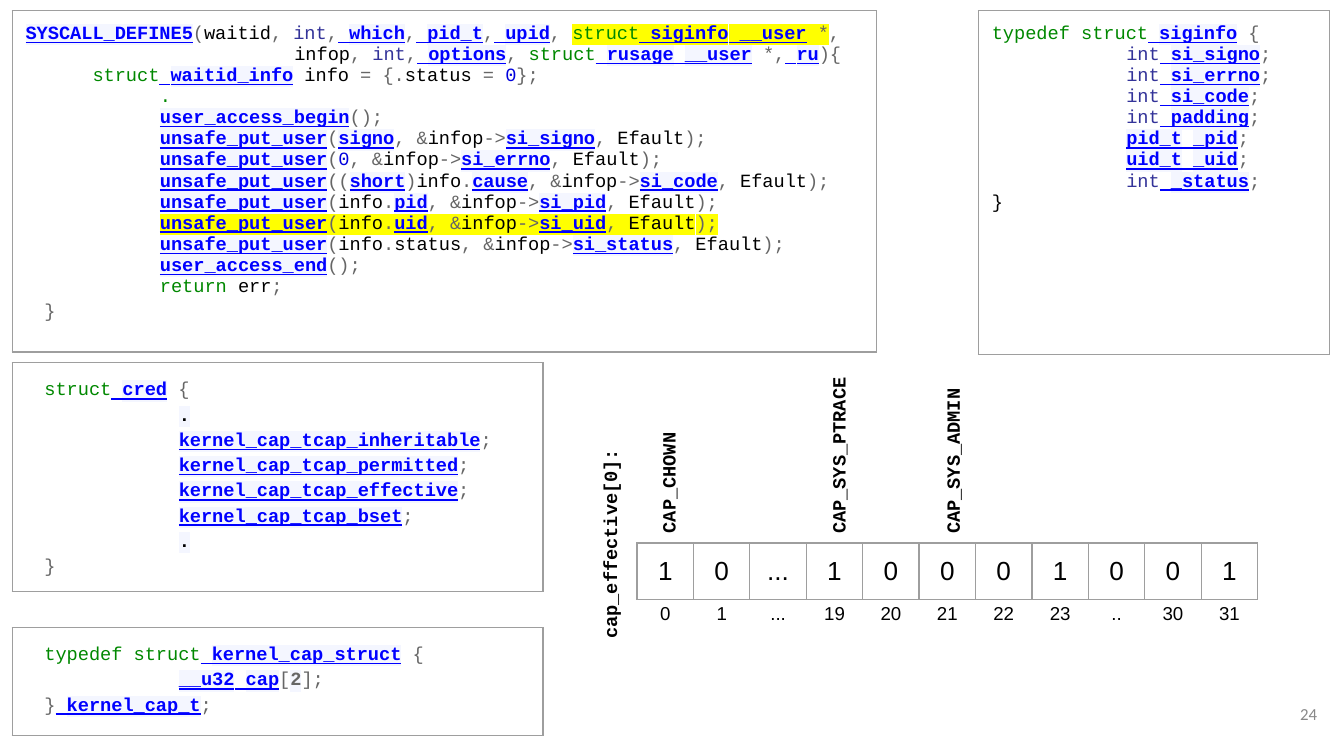
from typing import NamedTuple

import pptx
import pptx.dml.color
import pptx.enum.text
import pptx.oxml
import pptx.oxml.ns
from pptx.util import Inches, Pt

ALIGN = pptx.enum.text.PP_ALIGN
MONO = "Courier New"
BORDER, BLACK, PALE, YELLOW = "9E9E9E", "000000", "F4F6FF", "FFFF00"


class Style(NamedTuple):
    color: str
    bold: bool = False
    underline: bool = False
    highlight: str = ""


class CodeBox(NamedTuple):
    left: float
    top: float
    width: float
    height: float
    lines: list[str]
    first_indented: int  # from this line on: indent and wider spacing


class TurnedLabel(NamedTuple):
    text: str
    left: float
    top: float
    width: float
    indent: float = 0


# A code line is spans split by "|"; each span starts with its style letter.
# A capital letter is the same style on yellow.
STYLES = {
    "g": Style("008800"),  # green keyword
    "i": Style("333399"),  # integer type
    "n": Style("0000DD"),  # number
    "p": Style("666666"),  # punctuation
    "q": Style("666666", bold=True, highlight=PALE),
    "t": Style(BLACK),  # plain text
    "b": Style(BLACK, bold=True, highlight=PALE),
    "u": Style("0000FF", underline=True),  # underlined gap
    "k": Style("0000FF", bold=True, underline=True, highlight=PALE),  # link
}


def member(kind: str, name: str, gap: str = "u ", end: str = ";") -> str:
    return f"t\t|{kind}|{gap}|k{name}|p{end}"


def put_user(argument: str, field: str, comma: str = "p, &") -> str:
    return f"kunsafe_put_user|{argument}|{comma}|tinfop|p->|k{field}|p,|t Efault|p);"


def on_yellow(line: str) -> str:
    return "|".join(span[0].upper() + span[1:] for span in line.split("|"))


SIGINFO = CodeBox(7.28, 0.08, 2.61, 2.56, [
    "gtypedef struct|u |ksiginfo|t |p{",
    *[member("iint", name) for name in ("si_signo", "si_errno", "si_code", "padding")],
    member("kpid_t", "_pid", end=";\t"),
    member("kuid_t", "_uid", end=";\t"),
    member("iint", "_status"),
    "t}",
], 9)
SYSCALL = CodeBox(0.09, 0.08, 6.43, 2.54, [
    "kSYSCALL_DEFINE5|p(|twaitid|p, |iint|p,|u |kwhich|p,|u |kpid_t|p,|u |kupid|p, "
    "|Gstruct|U |Ksiginfo|U |K__user|T |P*|p,",
    "t\t\tinfop|p, |iint|p,|u |koptions|p, |gstruct|u |krusage|u |k__user|t |p*,|u |kru|p){",
    "g      struct|u |kwaitid_info|t info |p= {.|tstatus |p= |n0|p};",
    "t\t|g.",
    "t\t|kuser_access_begin|p();",
    "t\t|" + put_user("p(|ksigno", "si_signo"),
    "t\t|" + put_user("p(|n0", "si_errno"),
    "t\t|" + put_user("p((|kshort|p)|tinfo|p.|kcause", "si_code"),
    "t\t|" + put_user("p(|tinfo|p.|kpid", "si_pid"),
    "t\t|" + on_yellow(put_user("p(|tinfo|p.|kuid", "si_uid", "p,|t |p&")),
    "t\t|" + put_user("p(|tinfo|p.|tstatus", "si_status"),
    "t\t|kuser_access_end|p();",
    "t\t|greturn|t err|p;",
    "p}",
], 13)
CRED = CodeBox(0.09, 2.7, 3.95, 1.7, [
    "gstruct|u |kcred|t |p{",
    "t\t|b.|t\t",
    *[member("kkernel_cap_t", "cap_" + name, "t\t")
      for name in ("inheritable", "permitted", "effective", "bset")],
    "t\t|b.",
    "p}",
], 0)
KERNEL_CAP = CodeBox(0.09, 4.67, 3.95, 0.78, [
    "gtypedef struct|u |kkernel_cap_struct|t |p{",
    "t\t|k__u32|u |kcap|p[|q2|p];",
    "p}|u |kkernel_cap_t|p;",
], 0)
LABELS = [
    TurnedLabel("cap_effective[0]:", 3.6, 3.94, 1.77, 0.14),
    TurnedLabel("CAP_SYS_ADMIN", 6.38, 3.25, 1.31),
    TurnedLabel("CAP_CHOWN", 4.44, 3.42, 0.96),
    TurnedLabel("CAP_SYS_PTRACE", 5.5, 3.22, 1.37),
]
INDEXES = "0 1 ... 19 20 21 22 23 .. 30 31".split()
BITS = "1 0 ... 1 0 0 0 1 0 0 1".split()


def element(xml: str):
    return pptx.oxml.parse_xml(xml.replace(">", f" {pptx.oxml.ns.nsdecls('a')}>", 1))


def set_font(font, name: str, size: float, color: str = BLACK, bold: bool = False) -> None:
    font.name, font.size, font.bold = name, Pt(size), bold
    font.color.rgb = pptx.dml.color.RGBColor.from_string(color)


def set_margins(holder, side: float, end: float) -> None:
    holder.margin_left = holder.margin_right = Inches(side)
    holder.margin_top = holder.margin_bottom = Inches(end)


def set_spacing(para, indent: float) -> None:
    para.line_spacing = 1.2
    properties = para._p.get_or_add_pPr()
    properties.set("marL", str(Inches(indent)))
    properties.set("indent", "0")


def add_plain_table(page, left: float, top: float, widths: list[float], height: float, bordered: bool):
    table = page.shapes.add_table(1, len(widths), Inches(left), Inches(top),
                                  Inches(sum(widths)), Inches(height)).table
    table.first_row = table.horz_banding = False
    for column, width in zip(table.columns, widths):
        column.width = Inches(width)
    paint = f'<a:solidFill><a:srgbClr val="{BORDER}"/></a:solidFill>' if bordered else "<a:noFill/>"
    for cell in table.iter_cells():
        set_margins(cell, 0.1, 0.1)
        cell.fill.background()
        for position, side in enumerate("LRTB"):
            cell._tc.tcPr.insert(position, element(f'<a:ln{side} w="9525">{paint}</a:ln{side}>'))
    return table


def add_span(para, marked: str) -> None:
    style = STYLES[marked[0].lower()]
    highlight = YELLOW if marked[0].isupper() else style.highlight
    span = para.add_run()
    span.text = marked[1:]
    set_font(span.font, MONO, 10, style.color, style.bold)
    span.font.underline = style.underline
    if highlight:
        mark = element(f'<a:highlight><a:srgbClr val="{highlight}"/></a:highlight>')
        span._r.rPr.find(pptx.oxml.ns.qn("a:solidFill")).addnext(mark)


def draw_code(page, code: CodeBox) -> None:
    table = add_plain_table(page, code.left, code.top, [code.width], code.height, True)
    frame = table.cell(0, 0).text_frame
    for number, line in enumerate(code.lines):
        para = frame.add_paragraph() if number else frame.paragraphs[0]
        para._p.get_or_add_pPr().set("defTabSz", str(Inches(1)))
        if number >= code.first_indented:
            set_spacing(para, 0.14)
        for marked in line.split("|"):
            add_span(para, marked)


def draw_row(page, top: float, height: float, values: list[str], size: float, bordered: bool) -> None:
    table = add_plain_table(page, 4.74, top, [0.42] * len(values), height, bordered)
    for cell, value in zip(table.iter_cells(), values):
        cell.text = value
        para = cell.text_frame.paragraphs[0]
        para.alignment = ALIGN.CENTER
        set_font(para.font, "Arial", size)


def add_text(page, text: str, left: float, top: float, width: float, height: float):
    box = page.shapes.add_textbox(Inches(left), Inches(top), Inches(width), Inches(height))
    box.text_frame.text = text
    return box, box.text_frame.paragraphs[0]


deck = pptx.Presentation()
deck.slide_width, deck.slide_height = Inches(10), Inches(10 * 9 / 16)
page = deck.slides.add_slide(deck.slide_layouts[6])

# Kernel code and capability bits
draw_code(page, SIGINFO)
draw_code(page, SYSCALL)
draw_row(page, 4.39, 0.33, INDEXES, 10, False)
draw_code(page, CRED)
draw_row(page, 4.04, 0.31, BITS, 14, True)

# Capability names
for label in LABELS:
    box, para = add_text(page, label.text, label.left, label.top, label.width, 0.33)
    box.rotation = 270
    box.text_frame.word_wrap = False
    set_margins(box.text_frame, 0.1, 0.1)
    set_spacing(para, label.indent)
    set_font(para.font, MONO, 10, bold=True)

draw_code(page, KERNEL_CAP)

# Page number
box, para = add_text(page, "24", 9.27, 5.1, 0.6, 0.43)
box.text_frame.word_wrap = True
box.text_frame.vertical_anchor = pptx.enum.text.MSO_ANCHOR.MIDDLE
set_margins(box.text_frame, 0.07, 0.04)
para.alignment = ALIGN.RIGHT
set_font(para.font, "Calibri", 9, "888888")

deck.save("out.pptx")
